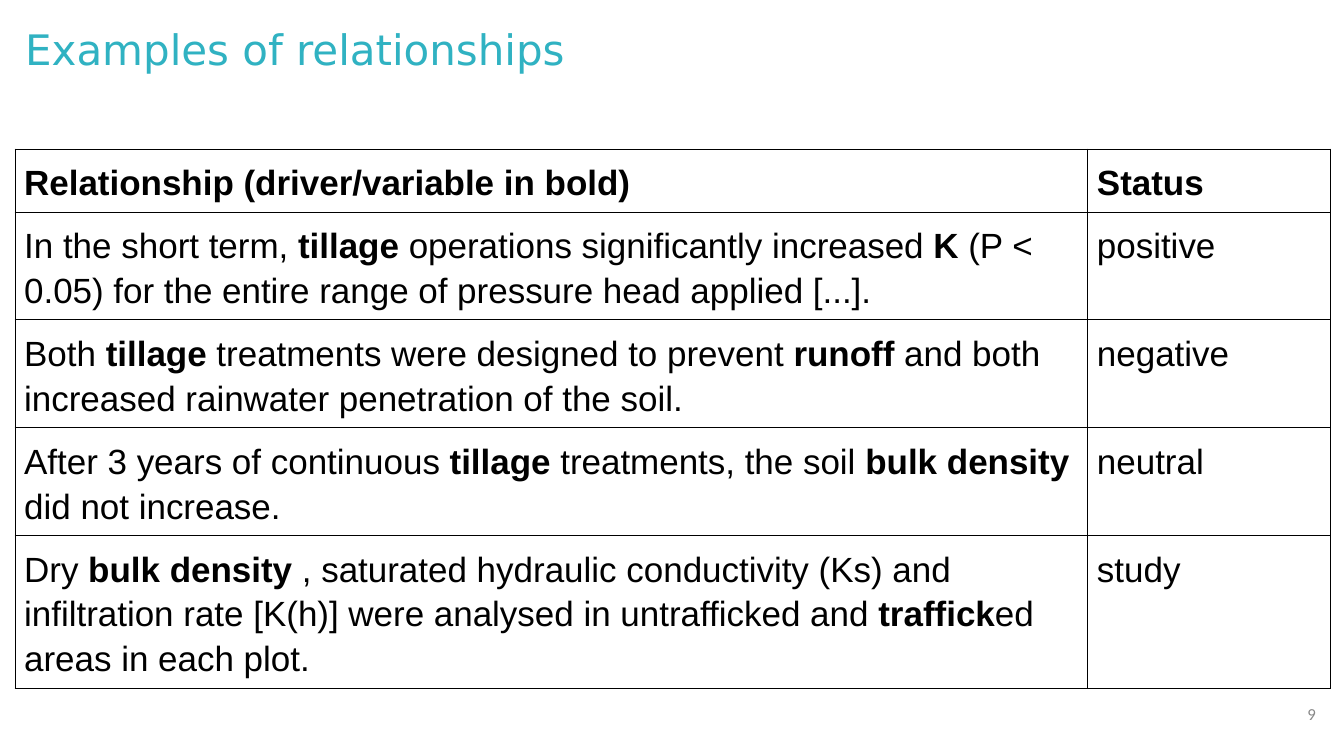
from lxml.etree import SubElement
from pptx import Presentation
from pptx.dml.color import RGBColor
from pptx.enum.text import MSO_ANCHOR, MSO_AUTO_SIZE, PP_ALIGN
from pptx.oxml.ns import qn
from pptx.util import Inches, Pt


def style(font, name, size, color):
    font.name, font.size = name, Pt(size)
    font.color.rgb = RGBColor.from_string(color)


def add_border(cell, side, color, width):
    line = SubElement(cell._tc.get_or_add_tcPr(), qn(f"a:ln{side}"), w=str(Pt(width)))
    fill = SubElement(line, qn("a:solidFill"))
    SubElement(fill, qn("a:srgbClr"), val=color)


prs = Presentation()
prs.slide_width, prs.slide_height = Inches(13.33), Inches(7.5)
s = prs.slides.add_slide(prs.slide_layouts[5])
LEFT = Inches(0.15)

# Title
title = s.shapes.title
title.left, title.top = LEFT, Inches(0.1)
title.width, title.height = Inches(12.42), Inches(0.83)
tf = title.text_frame
tf.text = "Examples of relationships"
tf.auto_size = MSO_AUTO_SIZE.NONE
tf.vertical_anchor = MSO_ANCHOR.MIDDLE
p = tf.paragraphs[0]
p.alignment, p.line_spacing = PP_ALIGN.LEFT, 0.9
style(p.font, "DejaVu Sans", 30, "30B2C2")

# Table: asterisks enclose the bold words
rows = [
    ("*Relationship (driver/variable in bold)*", "*Status*"),
    ("In the short term, *tillage* operations significantly increased *K* (P < 0.05) "
     "for the entire range of pressure head applied [...].", "positive"),
    ("Both *tillage* treatments were designed to prevent *runoff* and both increased "
     "rainwater penetration of the soil.", "negative"),
    ("After 3 years of continuous *tillage* treatments, the soil *bulk density* "
     "did not increase.", "neutral"),
    ("Dry *bulk density* , saturated hydraulic conductivity (Ks) and infiltration rate "
     "[K(h)] were analysed in untrafficked and *traffick*ed areas in each plot.", "study"),
]
widths = [10.64, 2.41]
heights = [0.62, 1.07, 1.07, 1.07, 1.51]
table = s.shapes.add_table(len(rows), len(widths), LEFT, Inches(1.48),
                           Inches(sum(widths)), Inches(sum(heights))).table
table.first_row = table.horz_banding = False
for column, width in zip(table.columns, widths):
    column.width = Inches(width)
for i, (row, height) in enumerate(zip(rows, heights)):
    table.rows[i].height = Inches(height)
    for j, text in enumerate(row):
        cell = table.cell(i, j)
        cell.margin_left = cell.margin_right = Inches(0.09)
        cell.margin_top = cell.margin_bottom = Inches(0.09)
        for side in "LRTB":
            heavy = (i, side) in [(0, "T"), (0, "B"), (1, "T")]
            add_border(cell, side, "000000", 1 if heavy else 0.75)
        cell.fill.background()
        p = cell.text_frame.paragraphs[0]
        p.line_spacing = 1.15
        style(p.font, "Arial", 25, "000000")
        for k, part in enumerate(text.split("*")):
            if part:
                r = p.add_run()
                r.text, r.font.bold = part, k % 2 == 1

# Slide number
number = s.shapes.add_textbox(Inches(12.35), Inches(6.8), Inches(0.8), Inches(0.57))
tf = number.text_frame
tf.text = "9"
tf.word_wrap = True
tf.vertical_anchor = MSO_ANCHOR.MIDDLE
p = tf.paragraphs[0]
p.alignment = PP_ALIGN.RIGHT
style(p.font, "Calibri", 12, "888888")

prs.save("out.pptx")
